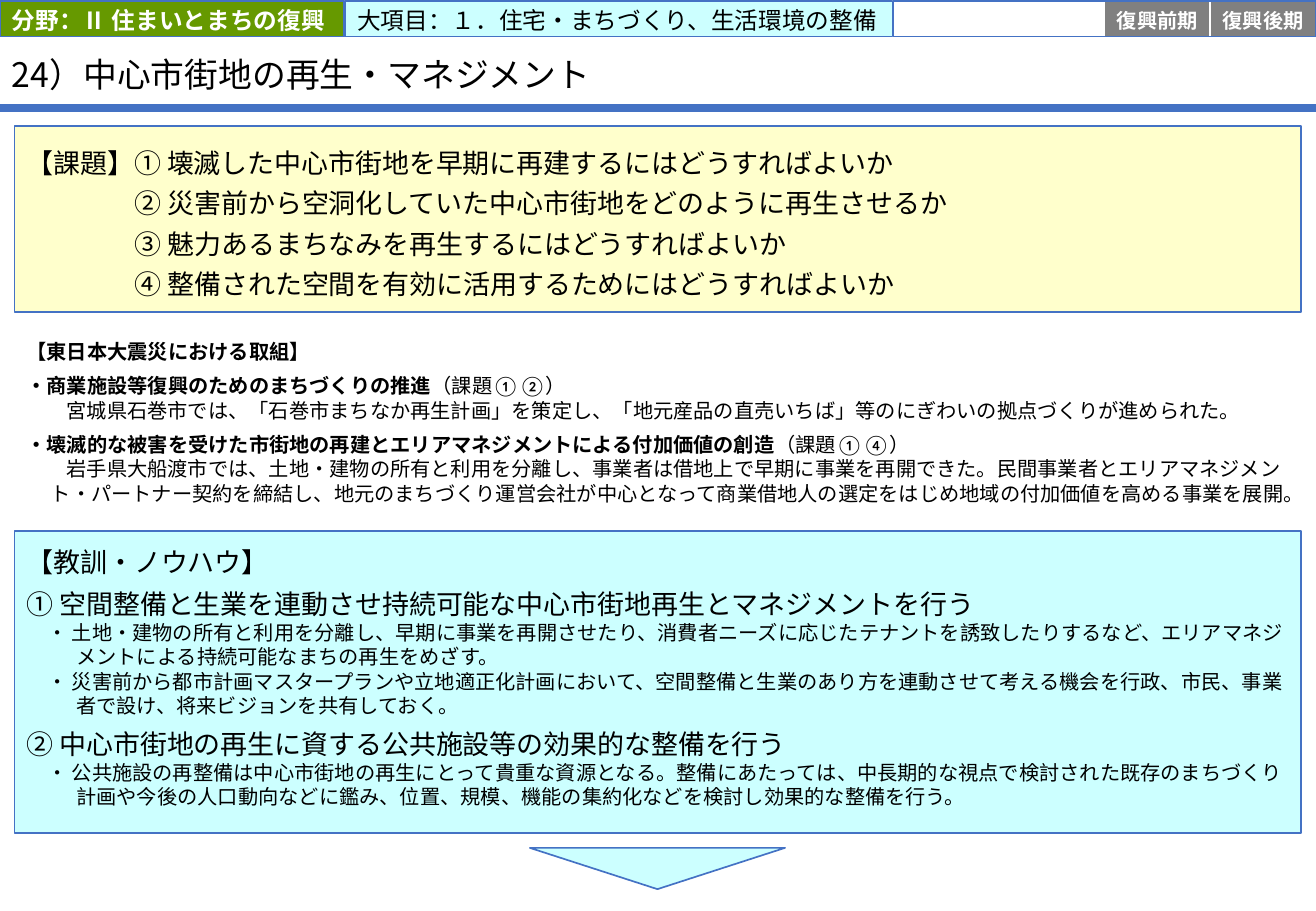
from dataclasses import dataclass, field

from lxml.etree import SubElement
from pptx import Presentation
from pptx.dml.color import RGBColor
from pptx.enum.shapes import MSO_CONNECTOR, MSO_SHAPE as Preset
from pptx.enum.text import MSO_ANCHOR as Anchor, PP_ALIGN as Align
from pptx.oxml.ns import qn
from pptx.util import Inches, Pt

SLIDE_W, SLIDE_H = 10.83, 7.5
BLUE, WHITE, BLACK, GRAY = "4472C4", "FFFFFF", "000000", "808080"
AQUA, CREAM, GREEN = "CCFFFF", "FFFFCC", "669900"
CALIBRI, NOTO = "Calibri", "Noto Sans CJK JP"
HEADER_TOP, HEADER_H = 0.13, 3.87
BODY_LEFT, BODY_W = 1.11, 97.78
STAGE_LEFT, STAGE_W = 67.87, 8.03
RULE_Y = 11.87


@dataclass
class Words:
    text: str
    size: float = 12
    font: str = NOTO
    bold: bool = False
    color: str = BLACK


@dataclass
class Line:
    words: list[Words]
    before: float = 0
    margin: float = 0
    indent: float = 0
    spacing: float | Pt | None = None
    align: Align = Align.LEFT


@dataclass
class Panel:
    """Area in percent of the slide, with its look and text."""
    left: float
    top: float
    width: float
    height: float
    fill: str | None = None
    line: str | None = None
    lines: list[Line] = field(default_factory=list)
    insets: tuple[float, float, float, float] = (0.1, 0.05, 0.1, 0.05)
    anchor: Anchor = Anchor.MIDDLE
    preset: Preset = Preset.RECTANGLE
    rotation: float = 0


def rgb(color: str) -> RGBColor:
    return RGBColor.from_string(color)


def across(percent: float) -> int:
    return Inches(SLIDE_W * percent / 100)


def down(percent: float) -> int:
    return Inches(SLIDE_H * percent / 100)


def write_line(paragraph, line: Line) -> None:
    paragraph.alignment = line.align
    paragraph.space_before = Pt(line.before)
    if line.spacing:
        paragraph.line_spacing = line.spacing
    properties = paragraph._p.get_or_add_pPr()
    properties.set("marL", str(Inches(line.margin)))
    properties.set("indent", str(Inches(line.indent)))
    for words in line.words:
        run = paragraph.add_run()
        run.text = words.text
        run.font.size, run.font.bold = Pt(words.size), words.bold
        run.font.name = words.font
        run.font.color.rgb = rgb(words.color)
        SubElement(run._r.get_or_add_rPr(), qn("a:ea"), typeface=words.font)


def draw_panel(slide, panel: Panel) -> None:
    shape = slide.shapes.add_shape(
        panel.preset, across(panel.left), down(panel.top), across(panel.width), down(panel.height))
    shape.shadow.inherit = False
    shape.rotation = panel.rotation
    if panel.fill:
        shape.fill.solid()
        shape.fill.fore_color.rgb = rgb(panel.fill)
    else:
        shape.fill.background()
    if panel.line:
        shape.line.color.rgb = rgb(panel.line)
        shape.line.width = Pt(1)
    else:
        shape.line.fill.background()
    frame = shape.text_frame
    frame.word_wrap, frame.vertical_anchor = True, panel.anchor
    frame.margin_left, frame.margin_top, frame.margin_right, frame.margin_bottom = map(Inches, panel.insets)
    for index, line in enumerate(panel.lines):
        write_line(frame.add_paragraph() if index else frame.paragraphs[0], line)


def draw_rule(slide) -> None:
    rule = slide.shapes.add_connector(MSO_CONNECTOR.STRAIGHT, 0, down(RULE_Y), across(100), down(RULE_Y))
    rule.line.color.rgb = rgb(BLUE)
    rule.line.width = Pt(4.5)
    SubElement(rule._element.spPr, qn("a:effectLst"))


def header(left: float, width: float, fill: str, words: Words) -> Panel:
    return Panel(left, HEADER_TOP, width, HEADER_H, fill, BLUE, [Line([words])], (0.1, 0.02, 0.1, 0))


def stage(column: int, name: str) -> Panel:
    label = [Line([Words(name, 12, CALIBRI, True, WHITE)], align=Align.CENTER)] if name else []
    return Panel(STAGE_LEFT + column * STAGE_W, HEADER_TOP, STAGE_W, HEADER_H,
                 GRAY if name else WHITE, WHITE, label, (0, 0.02, 0, 0))


def issue(text: str, margin: float = 0.89) -> Line:
    return Line([Words(text, 16)], margin=margin, spacing=Pt(24))


def effort(topic: str, issues: str) -> Line:
    return Line([Words(topic, 12, CALIBRI, True), Words(issues, 12, CALIBRI)], 6, 0.2, -0.2)


def account(text: str) -> Line:
    return Line([Words(text)], margin=0.2, indent=0.13)


def lesson(text: str, before: float = 6) -> Line:
    return Line([Words(text, 16)], before)


def advice(text: str) -> Line:
    return Line([Words(text)], margin=0.41, indent=-0.24)


EFFORTS = [
    Line([Words("【東日本大震災における取組】", 12, CALIBRI, True)]),
    effort("・商業施設等復興のためのまちづくりの推進", "（課題①②）"),
    account("宮城県石巻市では、「石巻市まちなか再生計画」を策定し、「地元産品の直売いちば」等のにぎわいの拠点づくりが進められた。"),
    effort("・壊滅的な被害を受けた市街地の再建とエリアマネジメントによる付加価値の創造", "（課題①④）"),
    account("岩手県大船渡市では、土地・建物の所有と利用を分離し、事業者は借地上で早期に事業を再開できた。民間事業者とエリアマネジメント・パートナー契約を締結し、地元のまちづくり運営会社が中心となって商業借地人の選定をはじめ地域の付加価値を高める事業を展開。"),
]
ISSUES = [
    issue("【課題】① 壊滅した中心市街地を早期に再建するにはどうすればよいか", 0),
    issue("② 災害前から空洞化していた中心市街地をどのように再生させるか"),
    issue("③ 魅力あるまちなみを再生するにはどうすればよいか"),
    issue("④ 整備された空間を有効に活用するためにはどうすればよいか"),
]
LESSONS = [
    lesson("【教訓・ノウハウ】", 0),
    lesson("① 空間整備と生業を連動させ持続可能な中心市街地再生とマネジメントを行う"),
    advice("・ 土地・建物の所有と利用を分離し、早期に事業を再開させたり、消費者ニーズに応じたテナントを誘致したりするなど、エリアマネジメントによる持続可能なまちの再生をめざす。"),
    advice("・ 災害前から都市計画マスタープランや立地適正化計画において、空間整備と生業のあり方を連動させて考える機会を行政、市民、事業者で設け、将来ビジョンを共有しておく。"),
    lesson("② 中心市街地の再生に資する公共施設等の効果的な整備を行う"),
    advice("・ 公共施設の再整備は中心市街地の再生にとって貴重な資源となる。整備にあたっては、中長期的な視点で検討された既存のまちづくり計画や今後の人口動向などに鑑み、位置、規模、機能の集約化などを検討し効果的な整備を行う。"),
]
TITLE = [Line([Words("24）中心市街地の再生・マネジメント", 20)], spacing=0.9)]
STAGES = ["", "", "復興前期", "復興後期"]
PANELS = [
    Panel(BODY_LEFT, 35.47, BODY_W, 21.73, WHITE, None, EFFORTS),
    Panel(0, 4.27, 87.53, 7.73, lines=TITLE, insets=(0.1, 0.04, 0.1, 0)),
    header(0, 26.13, GREEN, Words("分野：Ⅱ 住まいとまちの復興", 14, CALIBRI, True, WHITE)),
    header(26.22, 41.83, AQUA, Words("大項目：１．住宅・まちづくり、生活環境の整備", 14, CALIBRI)),
    Panel(BODY_LEFT, 13.87, BODY_W, 20.4, CREAM, BLUE, ISSUES, (0.1, 0.12, 0.1, 0.12)),
    Panel(BODY_LEFT, 58.27, BODY_W, 33.2, AQUA, BLUE, LESSONS, (0.1, 0.12, 0.1, 0), Anchor.TOP),
    Panel(40.26, 93.07, 19.39, 4.53, AQUA, BLUE, preset=Preset.ISOSCELES_TRIANGLE, rotation=180),
    *(stage(column, name) for column, name in enumerate(STAGES)),
    Panel(STAGE_LEFT, HEADER_TOP, STAGE_W * len(STAGES), HEADER_H, None, BLUE),
]


def main() -> None:
    """Build the slide on reviving the town centre."""
    deck = Presentation()
    deck.slide_width, deck.slide_height = Inches(SLIDE_W), Inches(SLIDE_H)
    slide = deck.slides.add_slide(deck.slide_layouts[6])
    draw_rule(slide)
    for panel in PANELS:
        draw_panel(slide, panel)
    deck.save("out.pptx")


if __name__ == "__main__":
    main()
